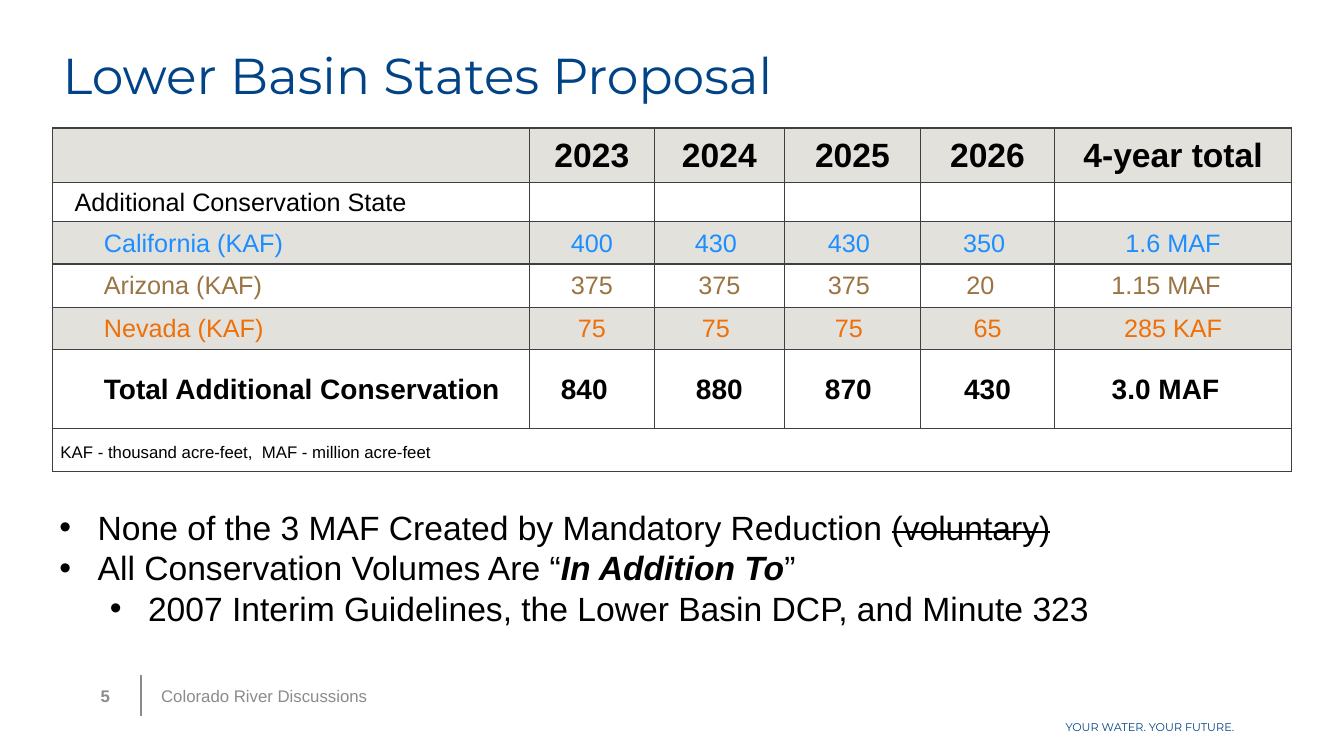
from lxml import etree
from pptx import Presentation
from pptx import util as u
from pptx.dml.color import RGBColor
from pptx.enum import shapes, text
from pptx.oxml import ns

NAVY = RGBColor(0x00, 0x43, 0x86)
GRAY = RGBColor(0x8C, 0x8A, 0x8E)
BLACK = RGBColor(0, 0, 0)
WHITE = RGBColor(0xFF, 0xFF, 0xFF)
BAND = RGBColor(0xE3, 0xE1, 0xDC)
BORDER = RGBColor(0x3F, 0x3E, 0x40)
BLUE = RGBColor(0x1D, 0x8E, 0xFF)
BROWN = RGBColor(0x9A, 0x74, 0x43)
ORANGE = RGBColor(0xED, 0x70, 0x09)

COLUMN_WIDTHS = [4.73, 1.24, 1.29, 1.35, 1.33, 2.35]
TABLE_ROWS = [
    (0.54, 0, dict(size=24, bold=True), BLACK, BAND,
     ["", "2023", "2024", "2025", "2026", "4-year total"]),
    (0.39, 0.21, dict(size=18, bold=False), BLACK, WHITE,
     ["Additional Conservation State", "", "", "", "", ""]),
    (0.42, 0.5, dict(size=18, bold=False), BLUE, BAND,
     ["California (KAF)", "400", "430", "430", "350", "1.6 MAF"]),
    (0.43, 0.5, dict(size=18, bold=False), BROWN, WHITE,
     ["Arizona (KAF)", "375", "375", "375", "20", "1.15 MAF"]),
    (0.42, 0.5, dict(size=18, bold=False), ORANGE, BAND,
     ["Nevada (KAF)", "75", "75", "75", "65", "285 KAF"]),
    (0.78, 0.5, dict(size=20, bold=True), BLACK, WHITE,
     ["Total Additional Conservation", "840", "880", "870", "430", "3.0 MAF"]),
    (0.43, 0.07, dict(size=12, bold=False), BLACK, WHITE,
     ["KAF - thousand acre-feet,  MAF - million acre-feet", "", "", "", "", ""]),
]
RIGHT_INSETS = {
    (2, 2): 0.07, (2, 3): 0.07, (2, 4): 0.07,
    (3, 3): 0.07, (3, 4): 0.14, (3, 5): 0.14,
    (4, 2): 0.07, (4, 3): 0.07,
    (5, 1): 0.15, (5, 3): 0.08, (5, 5): 0.15,
}
BULLETS = [
    (0, [("None of the 3 MAF Created by Mandatory Reduction ", {}),
         ("(voluntary)", {"strike": "sngStrike"})]),
    (0, [("All Conservation Volumes Are “", {}),
         ("In Addition To", {"b": "1", "i": "1"}), ("”", {})]),
    (1, [("2007 Interim Guidelines, the Lower Basin DCP, and Minute 323", {})]),
]


def format_font(font, color, size, name="Arial", bold=False):
    values = dict(size=u.Pt(size), name=name, bold=bold)
    for key, value in values.items():
        setattr(font, key, value)
    font.color.rgb = color


def add_title(slide, left, top, width, height):
    title = slide.shapes.title
    box = dict(left=left, top=top, width=width, height=height)
    for key, value in box.items():
        setattr(title, key, u.Inches(value))
    frame = title.text_frame
    frame.text = "Lower Basin States Proposal"
    settings = dict(auto_size=text.MSO_AUTO_SIZE.NONE, word_wrap=True,
                    vertical_anchor=text.MSO_ANCHOR.BOTTOM)
    for key, value in settings.items():
        setattr(frame, key, value)
    paragraph = frame.paragraphs[0]
    paragraph.alignment = text.PP_ALIGN.LEFT
    paragraph.line_spacing = 0.9
    format_font(paragraph.font, NAVY, 36, "Montserrat")


def add_borders(cell):
    properties = cell._tc.get_or_add_tcPr()
    for side in ("a:lnL", "a:lnR", "a:lnT", "a:lnB"):
        line = etree.SubElement(properties, ns.qn(side), w=str(u.Pt(1)))
        fill = etree.SubElement(line, ns.qn("a:solidFill"))
        etree.SubElement(fill, ns.qn("a:srgbClr"), val=str(BORDER))


def add_conservation_table(slide, left, top):
    row_heights = [row[0] for row in TABLE_ROWS]
    table = slide.shapes.add_table(
        len(TABLE_ROWS), len(COLUMN_WIDTHS), u.Inches(left), u.Inches(top),
        u.Inches(sum(COLUMN_WIDTHS)), u.Inches(sum(row_heights))).table
    for column, width in zip(table.columns, COLUMN_WIDTHS):
        column.width = u.Inches(width)
    for row_index, (height, indent, style, color, fill, values) in enumerate(TABLE_ROWS):
        table.rows[row_index].height = u.Inches(height)
        for column_index, value in enumerate(values):
            cell = table.cell(row_index, column_index)
            add_borders(cell)
            cell.fill.solid()
            cell.fill.fore_color.rgb = fill
            inset = RIGHT_INSETS.get((row_index, column_index), 0)
            settings = dict(
                vertical_anchor=text.MSO_ANCHOR.MIDDLE,
                margin_left=u.Inches(0.01 + (0 if column_index else indent)),
                margin_right=u.Inches(0.01 + inset),
                margin_top=u.Inches(0.01), margin_bottom=0)
            for key, setting in settings.items():
                setattr(cell, key, setting)
            cell.text = value
            paragraph = cell.text_frame.paragraphs[0]
            paragraph.alignment = text.PP_ALIGN.CENTER if column_index else text.PP_ALIGN.LEFT
            format_font(paragraph.font, color, **style)
    last_row = len(TABLE_ROWS) - 1
    note = table.cell(last_row, 0)
    note.merge(table.cell(last_row, len(COLUMN_WIDTHS) - 1))
    note.margin_top = u.Inches(0.06)


def add_text_box(slide, left, top, width, height, wrap=True, anchor=text.MSO_ANCHOR.TOP):
    frame = slide.shapes.add_textbox(*map(u.Inches, (left, top, width, height))).text_frame
    frame.word_wrap = wrap
    frame.vertical_anchor = anchor
    return frame


def add_bullets(slide, left, top, width, height):
    frame = add_text_box(slide, left, top, width, height)
    for index, (level, runs) in enumerate(BULLETS):
        paragraph = frame.paragraphs[0] if index == 0 else frame.add_paragraph()
        paragraph.level = level
        properties = paragraph._p.get_or_add_pPr()
        properties.set("marL", str(u.Inches(0.38 + 0.5 * level)))
        properties.set("indent", str(u.Inches(-0.38)))
        etree.SubElement(properties, ns.qn("a:buFont"), typeface="Arial")
        etree.SubElement(properties, ns.qn("a:buChar"), char="•")
        format_font(paragraph.font, BLACK, 24)
        for words, attributes in runs:
            run = paragraph.add_run()
            run.text = words
            format_font(run.font, BLACK, 24)
            for key, value in attributes.items():
                run._r.get_or_add_rPr().set(key, value)


def add_label(slide, words, box, color, size, name="Arial", bold=False, **settings):
    frame = add_text_box(slide, *box, **settings)
    frame.text = words
    format_font(frame.paragraphs[0].runs[0].font, color, size, name, bold)


def add_footer(slide, left, top, height):
    divider = left + 0.5
    line = slide.shapes.add_connector(
        shapes.MSO_CONNECTOR.STRAIGHT,
        *map(u.Inches, (divider, top, divider, top + height)))
    line.line.color.rgb = GRAY
    line.line.width = u.Pt(1)
    etree.SubElement(line._element.spPr, ns.qn("a:effectLst"))
    middle = text.MSO_ANCHOR.MIDDLE
    add_label(slide, "5", (left, top, 0.5, height), GRAY, 12, bold=True, anchor=middle)
    add_label(slide, "Colorado River Discussions", (divider + 0.1, top, 8.5, height),
              GRAY, 12, anchor=middle)
    add_label(slide, "YOUR WATER. YOUR FUTURE.", (10.47, top + height, 2.07, 0.24),
              NAVY, 8, "Montserrat", wrap=False)


def main():
    presentation = Presentation()
    presentation.slide_width = u.Inches(13.33)
    presentation.slide_height = u.Inches(7.5)
    slide = presentation.slides.add_slide(presentation.slide_layouts[5])
    add_title(slide, 0.52, 0.03, 10.3, 1.07)
    add_conservation_table(slide, 0.52, 1.27)
    add_bullets(slide, 0.49, 4.98, 12.29, 1.72)
    add_footer(slide, 0.9, 6.7, 0.4)
    presentation.save("out.pptx")


if __name__ == "__main__":
    main()
